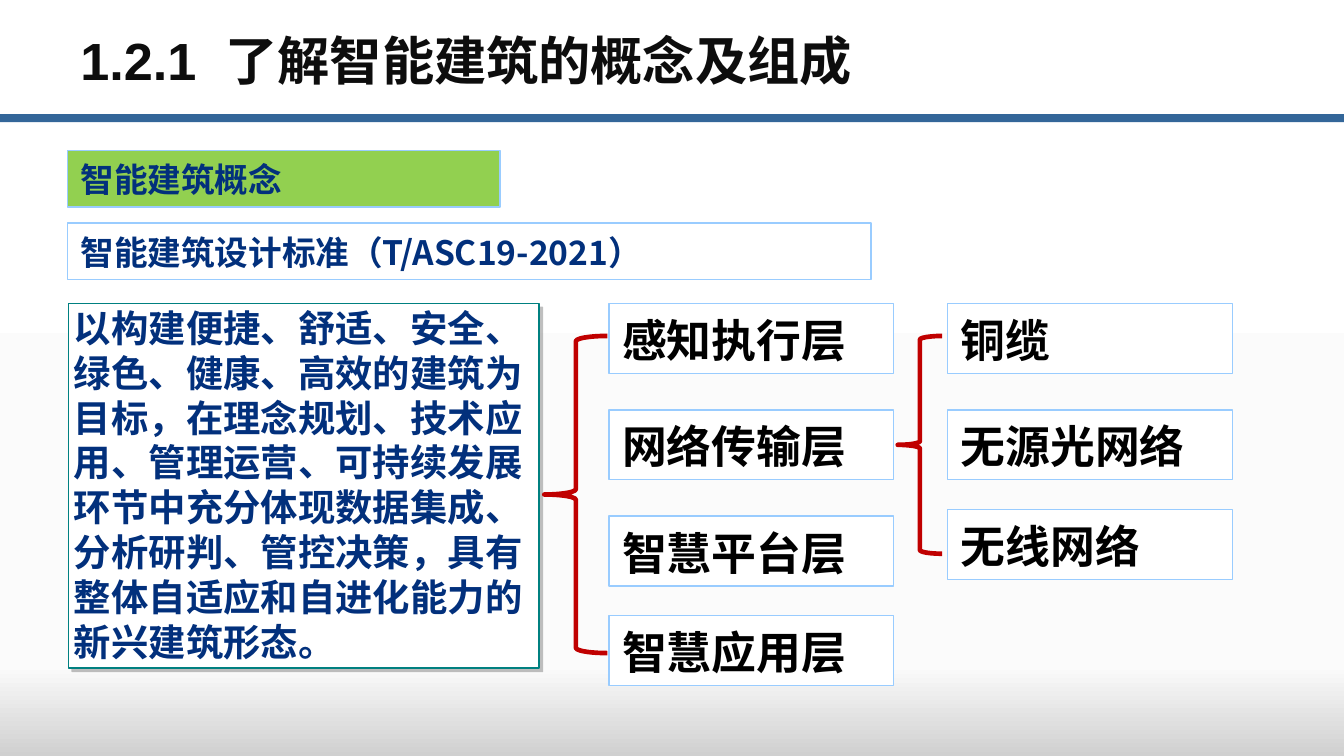
from copy import deepcopy

from lxml import etree
from pptx import Presentation
from pptx.dml.color import RGBColor
from pptx.enum.shapes import MSO_SHAPE as Shape
from pptx.enum.text import MSO_ANCHOR as Anchor, PP_ALIGN as Align
from pptx.oxml.ns import qn
from pptx.util import Inches, Pt

CJK_FONT = "Noto Sans CJK SC"
NAVY, BLACK, WHITE, SKY = "02307C", "000000", "FFFFFF", "99CCFF"


def rgb(value):
    return RGBColor.from_string(value)


def add_box(kind, bounds, fill=None, line=None, width=0.75, text="",
            size=24, color=BLACK, font=CJK_FONT, spacing=1.05):
    """Add a preset shape; fill or line of None leaves that part unpainted."""
    box = slide.shapes.add_shape(kind, *map(Inches, bounds))
    box.shadow.inherit = False
    if fill:
        box.fill.solid()
        box.fill.fore_color.rgb = rgb(fill)
    else:
        box.fill.background()
    if line:
        box.line.color.rgb = rgb(line)
        box.line.width = Pt(width)
    else:
        box.line.fill.background()
    if text:
        frame = box.text_frame
        frame.word_wrap = True
        frame.vertical_anchor = Anchor.TOP
        para = frame.paragraphs[0]
        para.text = text
        para.alignment = Align.LEFT
        para.line_spacing = spacing
        para.font.size = Pt(size)
        para.font.bold = True
        para.font.color.rgb = rgb(color)
        para.font.name = font
        defaults = para._p.pPr.find(qn("a:defRPr"))
        etree.SubElement(defaults, qn("a:ea"), typeface=CJK_FONT)
    return box


deck = Presentation()
deck.slide_width, deck.slide_height = Inches(10), Inches(10 * 9 / 16)
slide = deck.slides.add_slide(deck.slide_layouts[6])

# Background: white fading to grey at the bottom
background = slide.background.fill
background.gradient()
background.gradient_angle = 270
stop_list = slide.element.find(".//" + qn("a:gsLst"))
stop_list.append(deepcopy(stop_list[0]))
stops = [(0, WHITE), (0.88, "FBFBFB"), (1, "D0D0D0")]
for stop, (position, color) in zip(background.gradient_stops, stops):
    stop.position = position
    stop.color.rgb = rgb(color)

# Title and rule
add_box(Shape.RECTANGLE, (-0.01, 0.85, 10.02, 0.06), fill="336699")
title = add_box(Shape.RECTANGLE, (0.5, 0.09, 8.93, 0.7), size=28,
                text="1.2.1  了解智能建筑的概念及组成", color="0D0D0D",
                font="Arial", spacing=1.0)
title.text_frame.vertical_anchor = Anchor.MIDDLE

# Headings
add_box(Shape.RECTANGLE, (0.5, 1.66, 5.98, 0.42), WHITE, SKY, size=18,
        text="智能建筑设计标准（T/ASC19-2021）", color=NAVY)
add_box(Shape.RECTANGLE, (0.5, 1.12, 3.22, 0.42), "92D050", SKY, size=18,
        text="智能建筑概念", color=NAVY, font="Arial")

# Definition with an offset shadow
definition = add_box(
    Shape.RECTANGLE, (0.51, 2.26, 3.5, 2.71), WHITE, "008080", size=20,
    text="以构建便捷、舒适、安全、绿色、健康、高效的建筑为目标，在理念规划、技术应用、"
         "管理运营、可持续发展环节中充分体现数据集成、分析研判、管控决策，"
         "具有整体自适应和自进化能力的新兴建筑形态。",
    color=NAVY, font="Arial", spacing=1.0)
frame = definition.text_frame
frame.margin_left = frame.margin_right = Inches(0.04)
frame.margin_top = frame.margin_bottom = Inches(0.01)
effects = definition._element.spPr.find(qn("a:effectLst"))
shadow = etree.SubElement(effects, qn("a:outerShdw"), dist=str(Pt(2.8)),
                          dir="2700000", algn="ctr", rotWithShape="0")
shadow_color = etree.SubElement(shadow, qn("a:srgbClr"), val="808080")
etree.SubElement(shadow_color, qn("a:alpha"), val="50000")

# Layers, and the media of the network layer, each group after a brace
columns = [
    (4.53, [(2.26, "感知执行层"), (3.05, "网络传输层"),
            (3.84, "智慧平台层"), (4.58, "智慧应用层")],
     (4.05, 2.5, 0.47, 2.36)),
    (7.05, [(2.26, "铜缆"), (3.05, "无源光网络"), (3.79, "无线网络")],
     (6.68, 2.5, 0.33, 1.62)),
]
for left, labels, brace_bounds in columns:
    for top, label in labels:
        add_box(Shape.RECTANGLE, (left, top, 2.12, 0.52), WHITE, SKY, text=label)
    add_box(Shape.LEFT_BRACE, brace_bounds, line="C00000", width=2.5)

deck.save("out.pptx")
